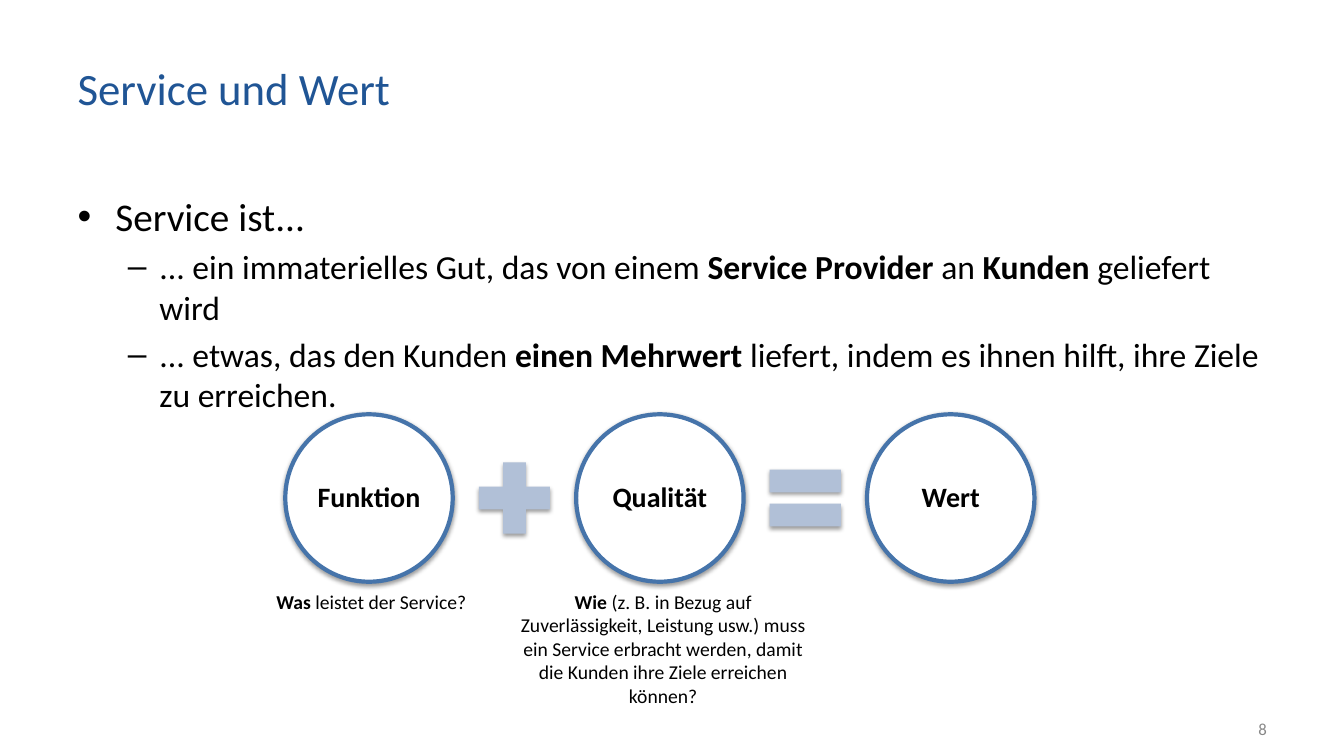
from lxml.etree import fromstring
from pptx import Presentation
from pptx.dml.color import RGBColor
from pptx.enum.shapes import MSO_SHAPE
from pptx.enum.text import MSO_ANCHOR, MSO_AUTO_SIZE, PP_ALIGN
from pptx.util import Cm, Pt

BLACK = RGBColor(0x00, 0x00, 0x00)
WHITE = RGBColor(0xFF, 0xFF, 0xFF)
TITLE_BLUE = RGBColor(0x20, 0x55, 0x95)
RING_BLUE = RGBColor(0x46, 0x74, 0xAA)
SIGN_BLUE = RGBColor(0xB1, 0xC0, 0xD7)
GREY = RGBColor(0x88, 0x88, 0x88)

SHADOW = (
    '<a:outerShdw xmlns:a="http://schemas.openxmlformats.org/drawingml/2006/main" '
    'blurRad="40000" dist="20000" dir="5400000" rotWithShape="0">'
    '<a:srgbClr val="000000"><a:alpha val="38000"/></a:srgbClr></a:outerShdw>'
)


def write(para, pieces, size, color):
    para.font.name = "Calibri"
    para.font.size = Pt(size)
    para.font.color.rgb = color
    for text, bold in pieces:
        span = para.add_run()
        span.text = text
        if bold:
            span.font.bold = True


def add_shadowed(kind, left, top, size, fill):
    shape = page.shapes.add_shape(kind, Cm(left), Cm(top), Cm(size), Cm(size))
    shape.fill.solid()
    shape.fill.fore_color.rgb = fill
    shape.shadow.inherit = False
    shape.element.spPr.find("{*}effectLst").append(fromstring(SHADOW))
    return shape


deck = Presentation()
deck.slide_width = Cm(33.87)
deck.slide_height = Cm(19.05)
page = deck.slides.add_slide(deck.slide_layouts[1])

title = page.shapes.title
title.left, title.top, title.width, title.height = Cm(1.7), Cm(0.76), Cm(25.17), Cm(2.92)
title.text_frame.auto_size = MSO_AUTO_SIZE.NONE
title.text_frame.vertical_anchor = MSO_ANCHOR.MIDDLE
para = title.text_frame.paragraphs[0]
para.alignment = PP_ALIGN.LEFT
write(para, [("Service und Wert", False)], 32, TITLE_BLUE)

body = page.placeholders[1]
body.left, body.top, body.width, body.height = Cm(1.7), Cm(4.72), Cm(30.48), Cm(12.85)
frame = body.text_frame
frame.auto_size = MSO_AUTO_SIZE.NONE
para = frame.paragraphs[0]
para.space_before = Pt(0)
write(para, [("Service ist...", False)], 28, BLACK)
statements = [
    [
        ("... ein immaterielles Gut, das von einem ", False),
        ("Service Provider ", True),
        ("an ", False),
        ("Kunden ", True),
        ("geliefert wird", False),
    ],
    [
        ("... etwas, das den Kunden ", False),
        ("einen Mehrwert ", True),
        ("liefert, indem es ihnen hilft, ihre Ziele zu erreichen.", False),
    ],
]
for pieces in statements:
    para = frame.add_paragraph()
    para.level = 1
    para.space_before = Pt(4.8)
    write(para, pieces, 24, BLACK)

captions = [
    (5.84, 14.73, 7.04, 0.86, PP_ALIGN.CENTER, 14, BLACK,
     [("Was ", True), ("leistet der Service?", False)]),
    (12.78, 14.73, 7.87, 2.64, PP_ALIGN.CENTER, 14, BLACK,
     [("Wie ", True),
      ("(z. B. in Bezug auf Zuverlässigkeit, Leistung usw.) muss ein Service "
       "erbracht werden, damit die Kunden ihre Ziele erreichen können?", False)]),
    (24.28, 17.86, 7.9, 1.02, PP_ALIGN.RIGHT, 12, GREY, [("8", False)]),
]
for left, top, width, height, alignment, size, color, pieces in captions:
    box = page.shapes.add_textbox(Cm(left), Cm(top), Cm(width), Cm(height))
    box.text_frame.word_wrap = True
    if color == GREY:
        box.text_frame.vertical_anchor = MSO_ANCHOR.MIDDLE
    para = box.text_frame.paragraphs[0]
    para.alignment = alignment
    write(para, pieces, size, color)

CIRCLE_LEFT, CIRCLE_TOP, CIRCLE_SIZE, PITCH = 7.19, 10.44, 4.22, 7.33
SIGN_SIZE = 2.44
for index, label in enumerate(["Funktion", "Qualität", "Wert"]):
    circle = add_shadowed(
        MSO_SHAPE.OVAL, CIRCLE_LEFT + index * PITCH, CIRCLE_TOP, CIRCLE_SIZE, WHITE
    )
    circle.line.color.rgb = RING_BLUE
    circle.line.width = Pt(3)
    frame = circle.text_frame
    frame.margin_left = frame.margin_right = Cm(0.08)
    frame.margin_top = frame.margin_bottom = Cm(0.08)
    frame.vertical_anchor = MSO_ANCHOR.MIDDLE
    para = frame.paragraphs[0]
    para.alignment = PP_ALIGN.CENTER
    para.line_spacing = 0.9
    para.font.bold = True
    write(para, [(label, False)], 20, BLACK)

sign_left = CIRCLE_LEFT + (CIRCLE_SIZE + PITCH - SIGN_SIZE) / 2
sign_top = CIRCLE_TOP + (CIRCLE_SIZE - SIGN_SIZE) / 2
signs = [(MSO_SHAPE.MATH_PLUS, [0.235]), (MSO_SHAPE.MATH_EQUAL, [0.235, 0.118])]
for index, (kind, adjustments) in enumerate(signs):
    sign = add_shadowed(kind, sign_left + index * PITCH, sign_top, SIGN_SIZE, SIGN_BLUE)
    sign.line.fill.background()
    for position, value in enumerate(adjustments):
        sign.adjustments[position] = value

deck.save("out.pptx")
